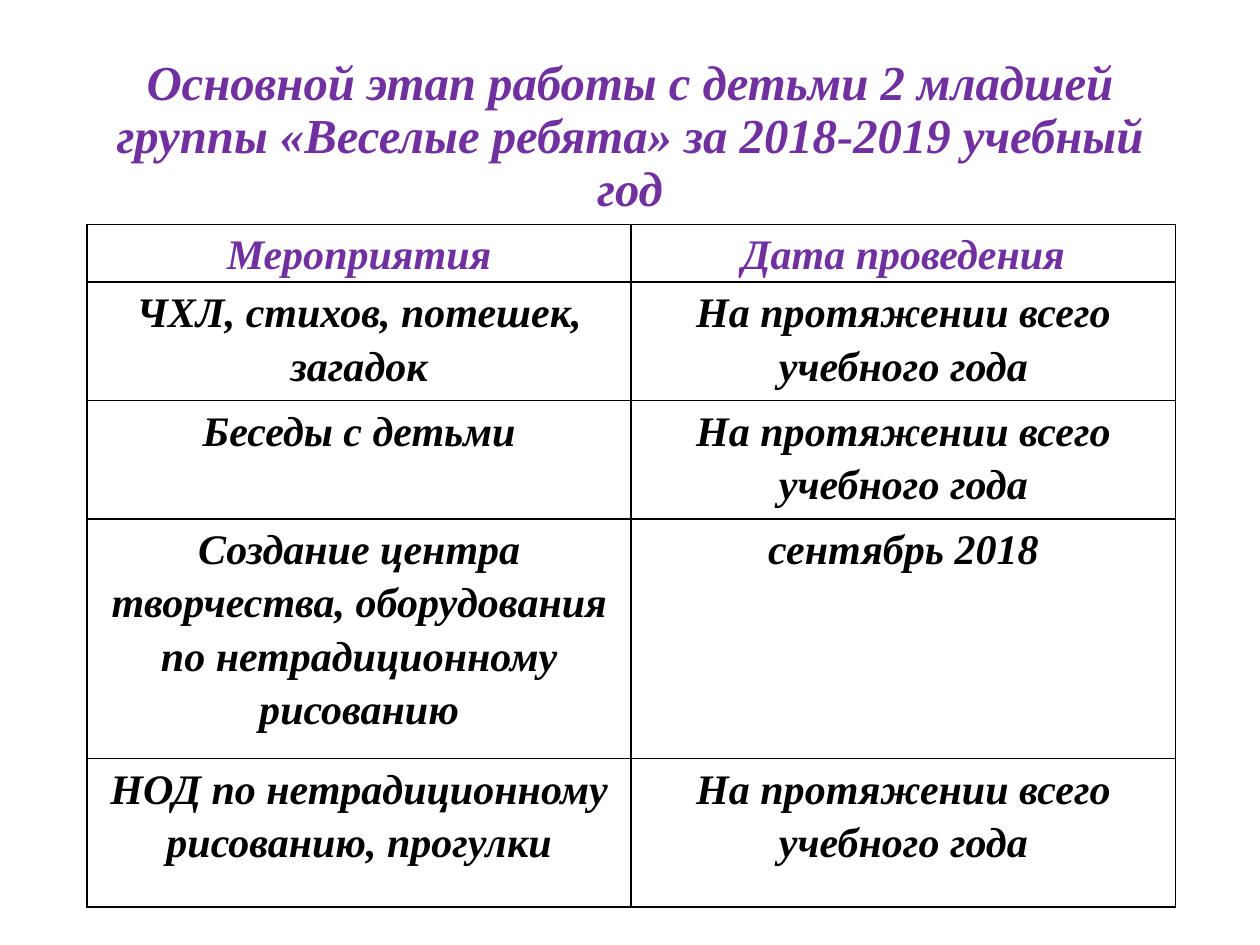
from dataclasses import dataclass

import pptx
import pptx.dml.color
import pptx.enum.text
import pptx.oxml
import pptx.oxml.ns
import pptx.util
from pptx.util import Inches

PURPLE = "7030A0"
BLACK = "000000"
WHITE = "FFFFFF"
ALL_YEAR = "На протяжении всего учебного года"


@dataclass
class Row:
    activity: str
    date: str
    height: float
    color: str = BLACK


ROWS = [
    Row("Мероприятия", "Дата проведения", 0.46, PURPLE),
    Row("ЧХЛ, стихов, потешек, загадок", ALL_YEAR, 0.94),
    Row("Беседы с детьми", ALL_YEAR, 0.94),
    Row("Создание центра творчества, оборудования по нетрадиционному рисованию",
        "сентябрь 2018", 1.9),
    Row("НОД по нетрадиционному рисованию, прогулки", ALL_YEAR, 1.18),
]


def rgb(color: str) -> pptx.dml.color.RGBColor:
    return pptx.dml.color.RGBColor.from_string(color)


def write_text(text_frame, text: str, size: float, color: str, spacing: float) -> None:
    text_frame.text = text
    paragraph = text_frame.paragraphs[0]
    paragraph.alignment = pptx.enum.text.PP_ALIGN.CENTER
    paragraph.line_spacing = spacing
    font = paragraph.runs[0].font
    font_format = {"name": "Times New Roman", "size": pptx.util.Pt(size),
                   "bold": True, "italic": True}
    for name, value in font_format.items():
        setattr(font, name, value)
    font.color.rgb = rgb(color)


def add_borders(cell) -> None:
    """Draw 1 pt black lines on all sides; call before filling the cell."""
    properties = cell._tc.get_or_add_tcPr()
    for side in ("lnL", "lnR", "lnT", "lnB"):
        properties.append(pptx.oxml.parse_xml(
            f'<a:{side} {pptx.oxml.ns.nsdecls("a")} w="12700"><a:solidFill>'
            f'<a:srgbClr val="{BLACK}"/></a:solidFill></a:{side}>'))


def format_cell(cell, text: str, color: str) -> None:
    margins = {"margin_left": 0.02, "margin_top": 0.01,
               "margin_right": 0.02, "margin_bottom": 0}
    for name, value in margins.items():
        setattr(cell, name, Inches(value))
    add_borders(cell)
    cell.fill.solid()
    cell.fill.fore_color.rgb = rgb(WHITE)
    write_text(cell.text_frame, text, 24, color, 1.15)


def add_title(slide) -> None:
    title = slide.shapes.title
    place = {"left": 0.69, "top": 0.76, "width": 8.62, "height": 1.09}
    for name, value in place.items():
        setattr(title, name, Inches(value))
    text_frame = title.text_frame
    text_frame.word_wrap = True
    text_frame.auto_size = pptx.enum.text.MSO_AUTO_SIZE.NONE
    text_frame.vertical_anchor = pptx.enum.text.MSO_ANCHOR.MIDDLE
    text_frame.margin_bottom = Inches(0.47)
    write_text(text_frame, "Основной этап работы с детьми 2 младшей группы "
               "«Веселые ребята» за 2018-2019 учебный год", 27.9, PURPLE, 0.9)


def add_schedule(slide) -> None:
    height = sum(row.height for row in ROWS)
    table = slide.shapes.add_table(len(ROWS), 2, Inches(0.69), Inches(1.78),
                                   Inches(8.64), Inches(height)).table
    for index, row in enumerate(ROWS):
        table.rows[index].height = Inches(row.height)
        for column, text in enumerate((row.activity, row.date)):
            format_cell(table.cell(index, column), text, row.color)


def main() -> None:
    presentation = pptx.Presentation()
    presentation.slide_width = Inches(10)
    presentation.slide_height = Inches(7.5)
    slide = presentation.slides.add_slide(presentation.slide_layouts[5])
    add_title(slide)
    add_schedule(slide)
    presentation.save("out.pptx")


if __name__ == "__main__":
    main()
